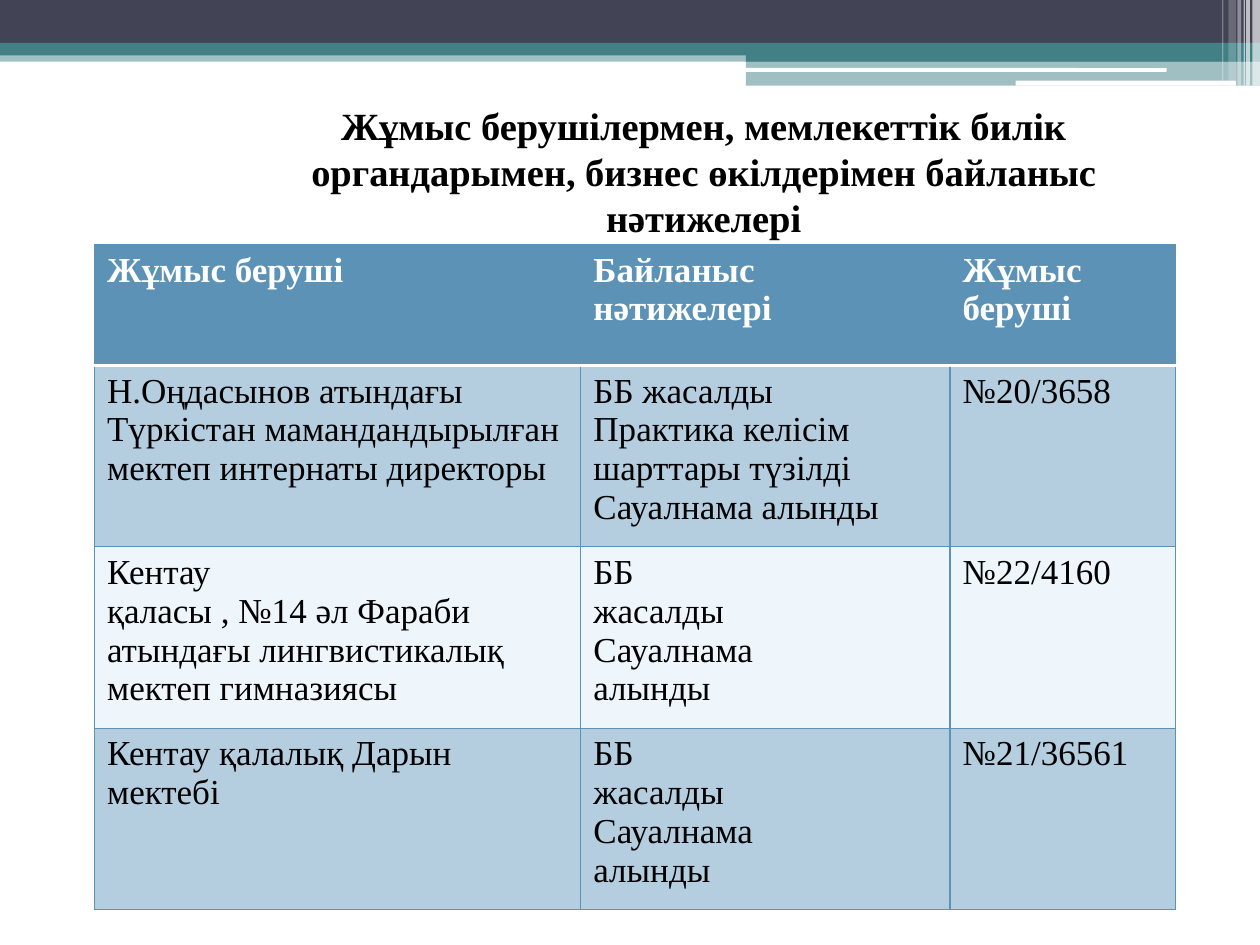
from lxml.etree import SubElement
from pptx import Presentation
from pptx.dml.color import RGBColor
from pptx.enum.shapes import MSO_SHAPE
from pptx.enum.text import PP_ALIGN
from pptx.oxml import parse_xml
from pptx.oxml.ns import nsdecls, qn
from pptx.util import Inches, Pt

# Content
TITLE = [
    "Жұмыс берушілермен, мемлекеттік билік",
    "органдарымен, бизнес өкілдерімен байланыс",
    "нәтижелері",
]
HEADER = [["Жұмыс беруші"], ["Байланыс нәтижелері"], ["Жұмыс беруші"]]
SHORT_RESULT = ["ББ", "жасалды", "Сауалнама", "алынды"]
BODY = [
    [["Н.Оңдасынов атындағы", "Түркістан мамандандырылған", "мектеп интернаты директоры"],
     ["ББ жасалды", "Практика келісім", "шарттары түзілді", "Сауалнама алынды"],
     ["№20/3658"]],
    [["Кентау", "қаласы , №14 әл Фараби", "атындағы лингвистикалық", "мектеп гимназиясы"],
     SHORT_RESULT,
     ["№22/4160"]],
    [["Кентау қалалық Дарын", "мектебі"],
     SHORT_RESULT,
     ["№21/36561"]],
]

THEME = {
    "font": "Times New Roman", "title_size": 22, "table_size": 20,
    "black": "000000", "white": "FFFFFF", "navy": "424456", "teal": "438086",
    "blue": "5C92B5", "band": "B4CDDF", "pale": "EEF5FB",
}

# Banner layers, back to front: left, top, width, height, colour, opacity %
BANDS = [
    (0, 0.4, 10, 0.09, "teal", 50),
    (0, 0, 10, 0.34, "navy", 100),
    (0, 0.34, 10, 0.1, "teal", 100),
    (5.92, 0.39, 4.08, 0.1, "teal", 100),
    (5.92, 0.48, 4.08, 0.2, "teal", 50),
]
ROUNDED_BARS = [(5.91, 0.54, 3.35, 0.03), (8.06, 0.64, 1.75, 0.04)]
# Stripes at the right end: left, width, height, opacity %
STRIPES = [
    (9.94, 0.06, 0.68, 65), (9.89, 0.03, 0.68, 65), (9.87, 0.01, 0.68, 60),
    (9.82, 0.03, 0.68, 40), (9.75, 0.06, 0.64, 20), (9.7, 0.01, 0.64, 30),
]

TITLE_BOX = (2.08, 0.76, 7.01, 1.21)
TABLE_LEFT, TABLE_TOP = 0.75, 1.94
COLUMN_WIDTHS = [3.86, 2.93, 1.79]
ROW_HEIGHTS = [0.96] + [1.44] * len(BODY)


def colour(name):
    return RGBColor.from_string(THEME[name])


def add_block(page, kind, place, fill, opacity=100):
    block = page.shapes.add_shape(kind, *map(Inches, place))
    block.shadow.inherit = False
    block.line.fill.background()
    block.fill.solid()
    block.fill.fore_color.rgb = colour(fill)
    if opacity < 100:
        tint = block.fill._xPr.find(qn("a:solidFill"))[0]
        SubElement(tint, qn("a:alpha"), val=str(opacity * 1000))


def write_lines(frame, lines, size, ink, bold, align):
    for number, line in enumerate(lines):
        para = frame.paragraphs[0] if number == 0 else frame.add_paragraph()
        para.alignment = align
        span = para.add_run()
        span.text = line
        span.font.name = THEME["font"]
        span.font.size = Pt(size)
        span.font.bold = bold
        span.font.color.rgb = colour(ink)


def set_borders(cell, borders):
    """Borders is a list of (side, colour name, points) in L, R, T, B order."""
    properties = cell._tc.get_or_add_tcPr()
    for position, (side, ink, points) in enumerate(borders):
        properties.insert(position, parse_xml(
            f'<a:ln{side} {nsdecls("a")} w="{Pt(points)}"><a:solidFill>'
            f'<a:srgbClr val="{THEME[ink]}"/></a:solidFill></a:ln{side}>'))


def add_banner(page):
    for *place, fill, opacity in BANDS:
        add_block(page, MSO_SHAPE.RECTANGLE, place, fill, opacity)
    for place in ROUNDED_BARS:
        add_block(page, MSO_SHAPE.ROUNDED_RECTANGLE, place, "white")
    for left, width, height, opacity in STRIPES:
        add_block(page, MSO_SHAPE.RECTANGLE, (left, 0, width, height), "white", opacity)


def add_title(page):
    box = page.shapes.add_textbox(*map(Inches, TITLE_BOX))
    box.text_frame.word_wrap = True
    write_lines(box.text_frame, TITLE, THEME["title_size"], "black", True, PP_ALIGN.CENTER)


def add_results_table(page):
    rows = [HEADER] + BODY
    table = page.shapes.add_table(
        len(rows), len(COLUMN_WIDTHS), Inches(TABLE_LEFT), Inches(TABLE_TOP),
        Inches(sum(COLUMN_WIDTHS)), Inches(sum(ROW_HEIGHTS))).table
    for column, width in zip(table.columns, COLUMN_WIDTHS):
        column.width = Inches(width)
    for row, height in zip(table.rows, ROW_HEIGHTS):
        row.height = Inches(height)

    for r, row in enumerate(rows):
        is_header = r == 0
        fill = "blue" if is_header else ("band" if r % 2 else "pale")
        ink = "white" if is_header else "black"
        align = PP_ALIGN.LEFT if is_header else PP_ALIGN.JUSTIFY
        rule = ("white", 1.5)
        thin = ("blue", 0.75)
        borders = [("L", *thin), ("R", *thin),
                   ("T", *(rule if r == 1 else thin)),
                   ("B", *(rule if is_header else thin))]
        for c, lines in enumerate(row):
            cell = table.cell(r, c)
            cell.fill.solid()
            cell.fill.fore_color.rgb = colour(fill)
            set_borders(cell, borders)
            write_lines(cell.text_frame, lines, THEME["table_size"], ink, is_header, align)


def main():
    deck = Presentation()
    deck.slide_width, deck.slide_height = Inches(10), Inches(7.5)
    page = deck.slides.add_slide(deck.slide_layouts[6])
    add_banner(page)
    add_title(page)
    add_results_table(page)
    deck.save("out.pptx")


if __name__ == "__main__":
    main()
